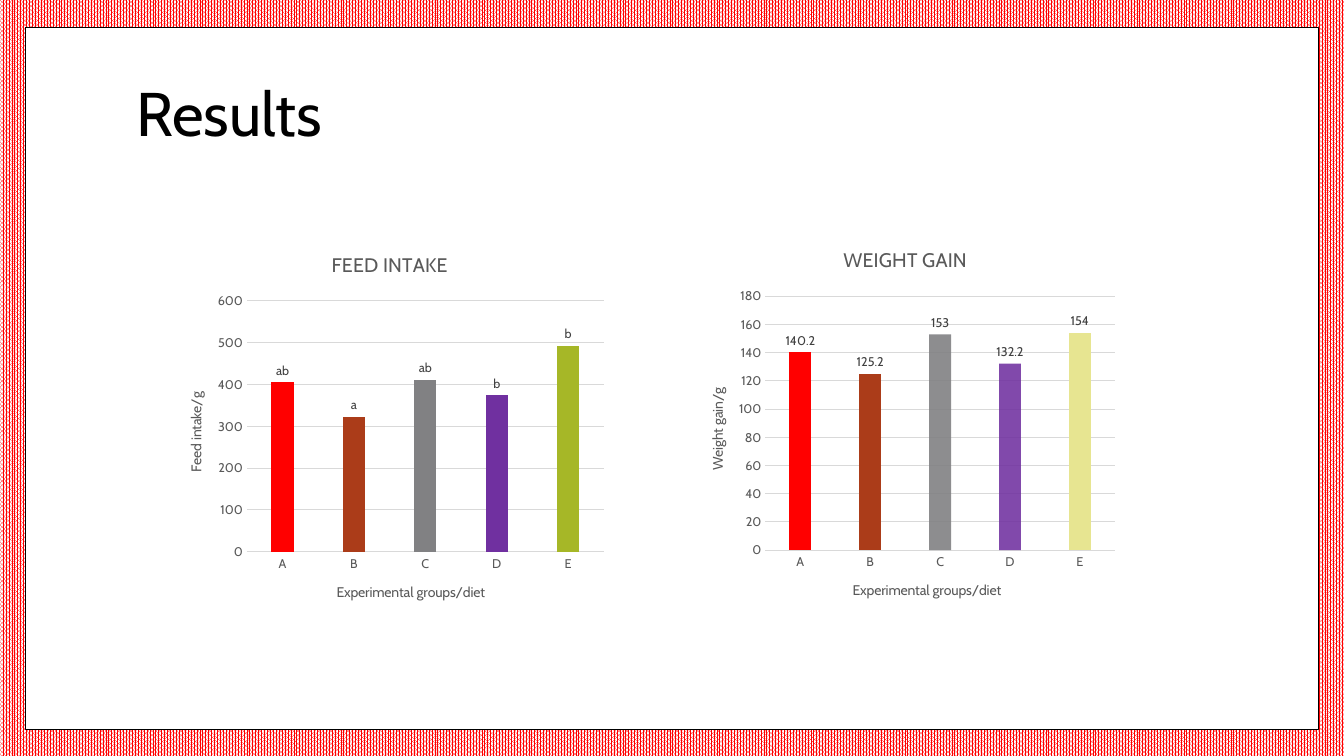
import dataclasses

import lxml.etree
import pptx
import pptx.chart.data
import pptx.dml.color
import pptx.enum.chart
import pptx.enum.dml
import pptx.enum.shapes
import pptx.enum.text
import pptx.oxml
import pptx.oxml.ns
import pptx.util


@dataclasses.dataclass(frozen=True)
class Theme:
    font: str = "Cabin"
    red: str = "FF0000"
    white: str = "FFFFFF"
    black: str = "000000"
    text: str = "595959"
    label: str = "404040"
    grid: str = "D9D9D9"
    brown: str = "AB3C19"
    gray: str = "818183"
    purple: str = "7030A0"
    green: str = "A6B727"
    yellow: str = "E7E591"
    title_size: int = 44
    chart_title_size: int = 14
    axis_title_size: int = 10
    tick_size: int = 9


def rgb(color):
    return pptx.dml.color.RGBColor.from_string(color)


class ResultsSlide:
    def __init__(self, presentation, theme):
        self.theme = theme
        self.width = presentation.slide_width
        self.height = presentation.slide_height
        self.slide = presentation.slides.add_slide(presentation.slide_layouts[6])

    def place(self, left, top, width, height):
        """Turn shares of the slide's size into lengths."""
        return (round(left * self.width), round(top * self.height),
                round(width * self.width), round(height * self.height))

    def style_font(self, font, size, color):
        font.name = self.theme.font
        font.size = pptx.util.Pt(size)
        font.bold = False
        font.color.rgb = rgb(color)

    def background(self):
        fill = self.slide.background.fill
        fill.patterned()
        fill.pattern = pptx.enum.dml.MSO_PATTERN.PERCENT_80
        fill.fore_color.rgb = rgb(self.theme.red)
        fill.back_color.rgb = rgb(self.theme.white)

    def panel(self, *shares):
        shape = self.slide.shapes.add_shape(
            pptx.enum.shapes.MSO_SHAPE.RECTANGLE, *self.place(*shares))
        shape.shadow.inherit = False
        shape.fill.solid()
        shape.fill.fore_color.rgb = rgb(self.theme.white)
        shape.line.color.rgb = rgb(self.theme.black)
        shape.line.width = pptx.util.Pt(1)

    def title(self, text, *shares):
        text_frame = self.slide.shapes.add_textbox(*self.place(*shares)).text_frame
        text_frame.word_wrap = True
        text_frame.vertical_anchor = pptx.enum.text.MSO_ANCHOR.MIDDLE
        text_frame.text = text
        paragraph = text_frame.paragraphs[0]
        paragraph.line_spacing = 0.9
        self.style_font(paragraph.runs[0].font, self.theme.title_size, self.theme.black)

    def chart_text(self, text_frame, text, size, color):
        text_frame.text = text
        self.style_font(text_frame.paragraphs[0].runs[0].font, size, color)

    def axis(self, axis, title):
        axis.has_title = True
        self.chart_text(axis.axis_title.text_frame, title,
                        self.theme.axis_title_size, self.theme.text)
        axis.major_tick_mark = pptx.enum.chart.XL_TICK_MARK.NONE
        self.style_font(axis.tick_labels.font, self.theme.tick_size, self.theme.text)

    def grid_line(self, line):
        line.color.rgb = rgb(self.theme.grid)
        line.width = pptx.util.Pt(0.75)

    def plot_layout(self, chart, **shares):
        """Fix the inner plot area, given as shares of the chart's size."""
        fields = "".join(f'<c:{key}Mode val="edge"/>' for key in "xy")
        fields += "".join(f'<c:{key} val="{share}"/>' for key, share in shares.items())
        layout = pptx.oxml.parse_xml(
            f'<c:layout {pptx.oxml.ns.nsdecls("c")}><c:manualLayout>'
            f'<c:layoutTarget val="inner"/>{fields}</c:manualLayout></c:layout>')
        plot_area = chart._chartSpace.chart.plotArea
        for old_layout in plot_area.xpath("c:layout"):
            plot_area.remove(old_layout)
        plot_area.insert(0, layout)

    def bars(self, series, colors, opacities, letters):
        position = pptx.enum.chart.XL_LABEL_POSITION.OUTSIDE_END
        labels = series.data_labels
        labels.show_value = True
        labels.position = position
        self.style_font(labels.font, self.theme.tick_size, self.theme.label)
        for index, color in enumerate(colors):
            fill = series.points[index].format.fill
            fill.solid()
            fill.fore_color.rgb = rgb(color)
        for index, percent in opacities.items():
            color_element = series._element.xpath(
                f'c:dPt[c:idx/@val="{index}"]//a:srgbClr')[0]
            lxml.etree.SubElement(color_element, pptx.oxml.ns.qn("a:alpha"),
                                  val=str(percent * 1000))
        for index, letter in enumerate(letters):
            label = series.points[index].data_label
            self.chart_text(label.text_frame, letter,
                            self.theme.tick_size, self.theme.label)
            label.position = position

    def column_chart(self, shares, title, value_title, values, colors,
                     maximum, step, opacities, letters=()):
        chart_data = pptx.chart.data.CategoryChartData()
        chart_data.categories = list("ABCDE")
        chart_data.add_series("Series 1", values)
        chart = self.slide.shapes.add_chart(
            pptx.enum.chart.XL_CHART_TYPE.COLUMN_CLUSTERED,
            *self.place(*shares), chart_data).chart
        self.style_font(chart.font, self.theme.axis_title_size, self.theme.black)
        chart.has_legend = False
        chart.has_title = True
        self.chart_text(chart.chart_title.text_frame, title,
                        self.theme.chart_title_size, self.theme.text)
        self.plot_layout(chart, x=0.18, y=0.17, w=0.8, h=0.65)

        self.axis(chart.category_axis, "Experimental groups/diet")
        self.grid_line(chart.category_axis.format.line)
        value_axis = chart.value_axis
        self.axis(value_axis, value_title)
        body = value_axis.axis_title.text_frame._txBody.bodyPr
        body.set("rot", "-5400000")
        body.set("vert", "horz")
        value_axis.minimum_scale = 0
        value_axis.maximum_scale = maximum
        value_axis.major_unit = step
        value_axis.format.line.fill.background()
        self.grid_line(value_axis.major_gridlines.format.line)

        plot = chart.plots[0]
        plot.gap_width = 219
        plot.overlap = -27
        plot.vary_by_categories = False
        self.bars(plot.series[0], colors, opacities, letters)


def main():
    presentation = pptx.Presentation()
    presentation.slide_width = pptx.util.Inches(13.33)
    presentation.slide_height = pptx.util.Inches(7.5)
    theme = Theme()
    results = ResultsSlide(presentation, theme)
    results.background()
    results.panel(0.019, 0.036, 0.962, 0.929)
    results.title("Results", 0.094, 0.089, 0.81, 0.129)
    group_colors = [theme.red, theme.brown, theme.gray, theme.purple]
    results.column_chart(
        (0.124, 0.311, 0.332, 0.511), "FEED INTAKE", "Feed intake/g",
        (405.6, 322.8, 410.7, 373.7, 492.1), group_colors + [theme.green],
        maximum=600, step=100, opacities={}, letters=("ab", "a", "ab", "b", "b"))
    results.column_chart(
        (0.511, 0.304, 0.325, 0.517), "WEIGHT GAIN", "Weight gain/g",
        (140.2, 125.2, 153, 132.2, 154), group_colors + [theme.yellow],
        maximum=180, step=20, opacities={2: 90, 3: 88})
    presentation.save("out.pptx")


if __name__ == "__main__":
    main()
